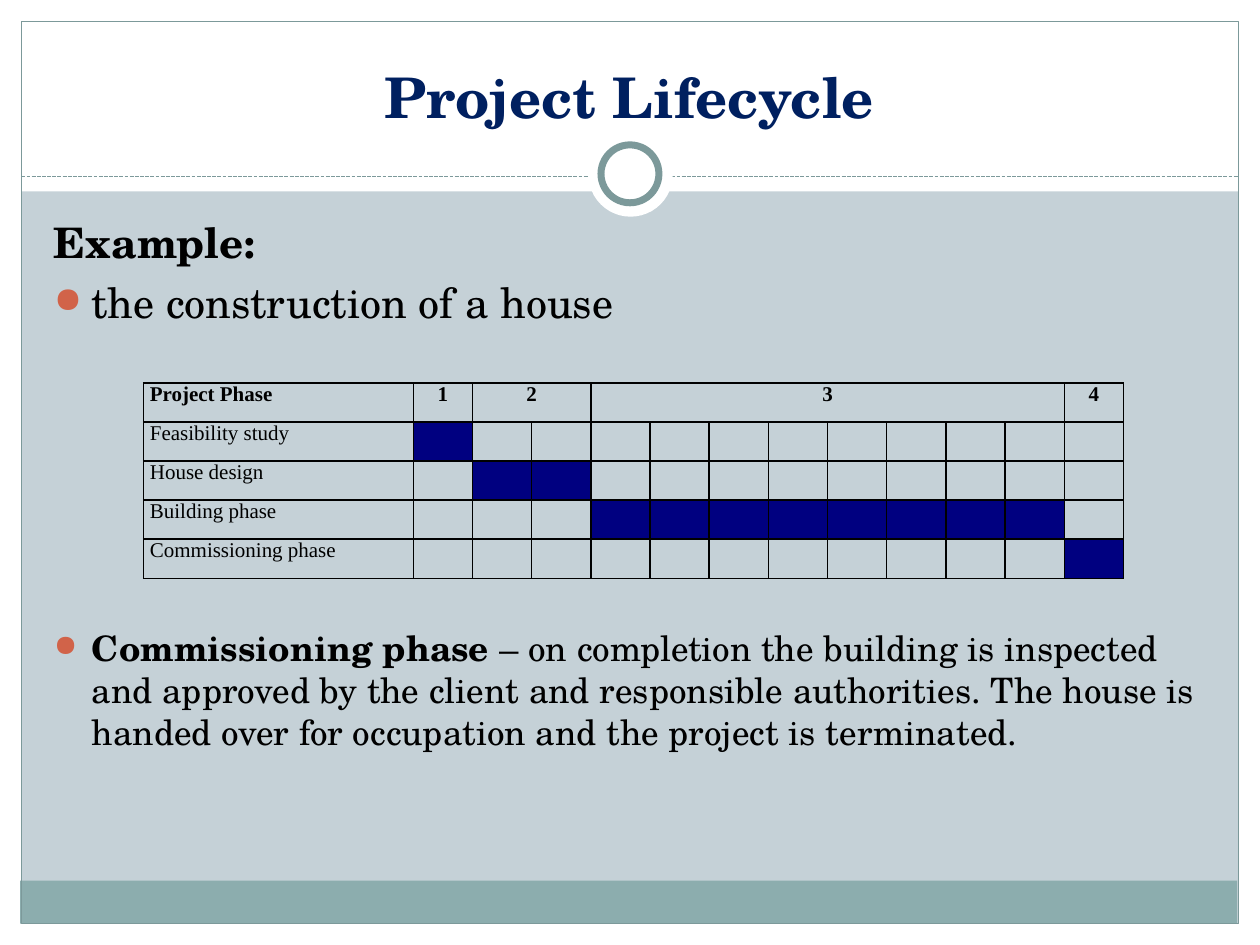
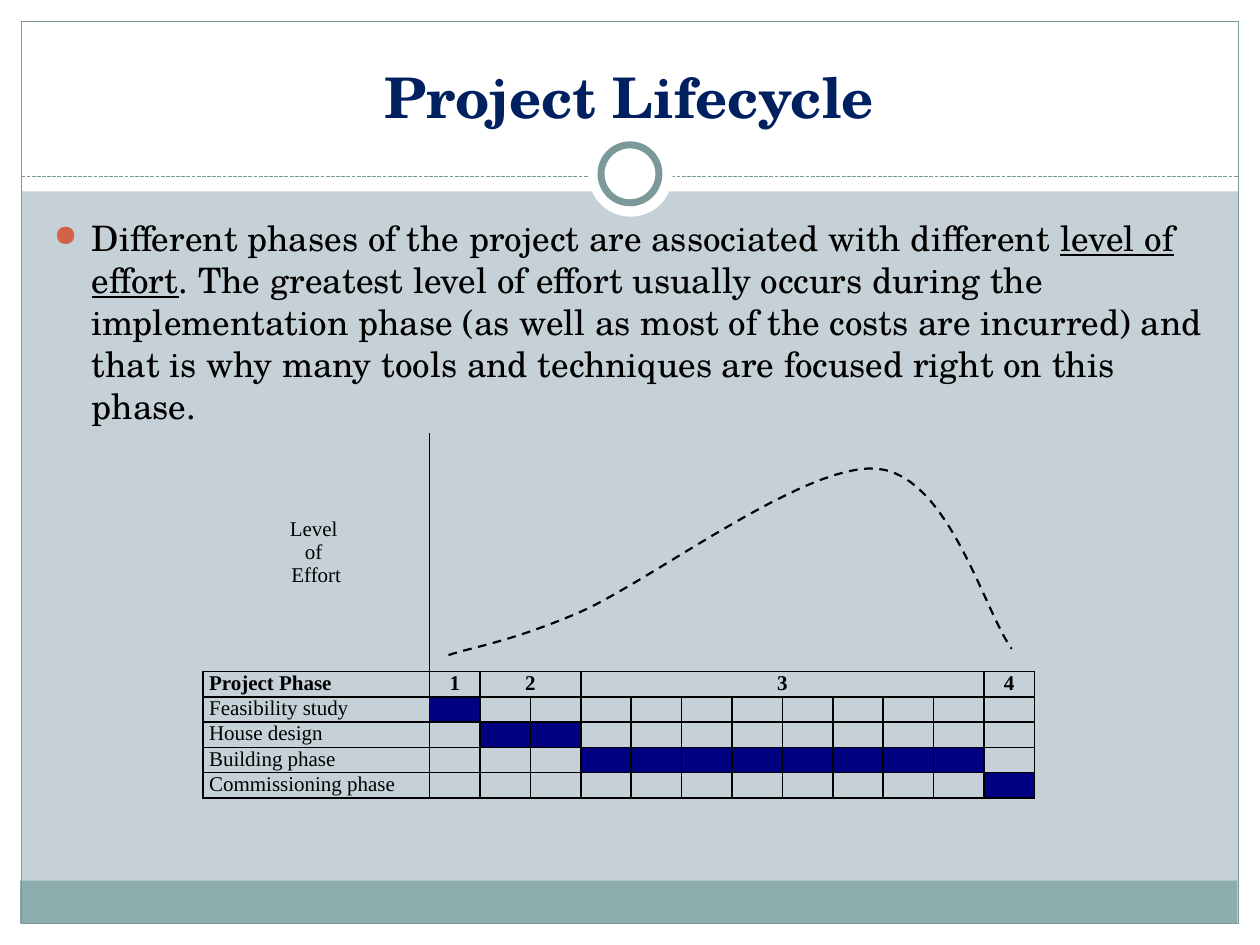
from lxml import etree
from pptx import Presentation
from pptx import util as u
from pptx.dml.color import RGBColor
from pptx.enum import dml, shapes, text
from pptx.oxml.ns import qn

HEADING_FONT = "TeX Gyre Schola"
TABLE_FONT = "Times New Roman"
WHITE, BLACK, NAVY = "FFFFFF", "000000", "002060"
PAPER, BAND, RULE = "C5D1D7", "8CADAE", "7C999A"
BULLET, BAR = "D16349", "000080"

PERIODS = 12
PHASE_SPANS = [("1", 1, 1), ("2", 2, 2), ("3", 4, 8), ("4", 12, 1)]  # label, column, width
PHASES = ["Feasibility study", "House design", "Building phase", "Commissioning phase"]


def color(value):
    return RGBColor.from_string(value)


def inches(*lengths):
    return [u.Inches(length) for length in lengths]


def apply(target, values):
    for name, value in values.items():
        setattr(target, name, value)


def bezier(start, first, second, end, steps=24):
    """Points on a cubic curve, without its start."""
    points = []
    for step in range(1, steps + 1):
        t = step / steps
        weights = (1 - t) ** 3, 3 * t * (1 - t) ** 2, 3 * t * t * (1 - t), t ** 3
        points.append(tuple(sum(w * p[axis] for w, p in zip(weights, (start, first, second, end)))
                            for axis in (0, 1)))
    return points


class Deck:
    def __init__(self):
        self.prs = Presentation()
        self.prs.slide_width, self.prs.slide_height = inches(10, 7.5)
        self.slide = None

    # Shared frame and title
    def new_slide(self, title):
        self.slide = self.prs.slides.add_slide(self.prs.slide_layouts[6])
        background = self.slide.background.fill
        background.solid()
        background.fore_color.rgb = color(PAPER)
        for edge in [(0, 7.33, 10, 0.17), (0, 0, 10, 1.52),
                     (0, 0, 0.17, 7.5), (9.83, 0, 0.17, 7.5)]:
            self.shape(edge, WHITE)
        self.shape((0.16, 6.99, 9.66, 0.34), BAND)
        self.shape((0.17, 0.17, 9.66, 7.16), line=RULE)
        self.dashed_rule((0.17, 1.4), (9.83, 1.4))
        oval = shapes.MSO_SHAPE.OVAL
        self.shape((4.67, 1.05, 0.67, 0.67), WHITE, kind=oval)
        self.shape((4.77, 1.15, 0.46, 0.46), WHITE, RULE, 4, oval)
        frame = self.text_box((0.33, 0.25, 9.33, 0.83), text.MSO_ANCHOR.BOTTOM)
        heading = frame.paragraphs[0]
        heading.alignment = text.PP_ALIGN.CENTER
        self.run(heading, title, 32, NAVY, bold=True)

    def shape(self, box, fill=None, line=None, width=0.75, kind=shapes.MSO_SHAPE.RECTANGLE):
        item = self.slide.shapes.add_shape(kind, *inches(*box))
        self.paint(item, fill)
        if line:
            self.stroke(item, line, width)
        else:
            item.line.fill.background()

    def paint(self, item, fill):
        item.shadow.inherit = False
        if fill:
            item.fill.solid()
            item.fill.fore_color.rgb = color(fill)
        else:
            item.fill.background()

    def stroke(self, item, line, width, dash=None):
        item.line.color.rgb = color(line)
        apply(item.line, {"width": u.Pt(width), "dash_style": dash})

    def dashed_rule(self, start, end):
        rule = self.slide.shapes.add_connector(
            shapes.MSO_CONNECTOR.STRAIGHT, *inches(*start, *end))
        self.stroke(rule, RULE, 0.75, dml.MSO_LINE.SQUARE_DOT)
        etree.SubElement(rule._element.spPr, qn("a:effectLst"))

    def curve(self, start, segments):
        points = [start]
        for segment in segments:
            points += bezier(points[-1], *segment)
        builder = self.slide.shapes.build_freeform(*inches(*start))
        builder.add_line_segments([inches(*point) for point in points[1:]], close=False)
        item = builder.convert_to_shape()
        self.paint(item, None)
        self.stroke(item, BLACK, 1.25, dml.MSO_LINE.DASH)

    # Text
    def text_box(self, box, anchor=text.MSO_ANCHOR.TOP):
        frame = self.slide.shapes.add_textbox(*inches(*box)).text_frame
        apply(frame, {"word_wrap": True, "vertical_anchor": anchor})
        return frame

    def run(self, paragraph, words, size, ink=BLACK, font=HEADING_FONT, bold=False, underline=False):
        run = paragraph.add_run()
        run.text = words
        apply(run.font, {"name": font, "size": u.Pt(size), "bold": bold, "underline": underline})
        run.font.color.rgb = color(ink)

    def body(self, items):
        """Each item: size, space before, bulleted, list of (words, format)."""
        frame = self.text_box((0.33, 1.67, 9.4, 5))
        for index, (size, before, bulleted, runs) in enumerate(items):
            paragraph = frame.add_paragraph() if index else frame.paragraphs[0]
            paragraph.space_before = u.Pt(before)
            if bulleted:
                self.bullet(paragraph)
            for words, style in runs:
                self.run(paragraph, words, size, **style)

    def bullet(self, paragraph):
        props = paragraph._p.get_or_add_pPr()
        indent = u.Inches(0.3)
        props.set("marL", str(indent))
        props.set("indent", str(-indent))
        tint = etree.SubElement(props, qn("a:buClr"))
        etree.SubElement(tint, qn("a:srgbClr"), val=BULLET)
        etree.SubElement(props, qn("a:buSzPct"), val="85000")
        etree.SubElement(props, qn("a:buChar"), char="●")

    # Phase table
    def phase_table(self, left, top, label_width, period_width, row_height, effort_height=None):
        offset = 1 if effort_height else 0
        heights = [effort_height] * offset + [row_height] * (len(PHASES) + 1)
        widths = [label_width] + [period_width] * PERIODS
        table = self.slide.shapes.add_table(
            len(heights), len(widths), *inches(left, top, sum(widths), sum(heights))).table
        apply(table, {"first_row": False, "horz_banding": False})
        for column, width in zip(table.columns, widths):
            column.width = u.Inches(width)
        for row, height in zip(table.rows, heights):
            row.height = u.Inches(height)

        bars = {(offset + 1 + index, column) for index, (_, first, count) in enumerate(PHASE_SPANS)
                for column in range(first, first + count)}
        for r in range(len(heights)):
            for c in range(len(widths)):
                sides = "LRTB"
                if r < offset:
                    sides = "RB" if c == 0 else "LB" if c == 1 else "B"
                self.cell_style(table.cell(r, c), sides, BAR if (r, c) in bars else None)

        self.cell_text(table.cell(offset, 0), ["Project Phase"], bold=True)
        for label, first, count in PHASE_SPANS:
            cell = table.cell(offset, first)
            if count > 1:
                cell.merge(table.cell(offset, first + count - 1))
            self.cell_text(cell, [label], True, True)
        for r, phase in enumerate(PHASES, offset + 1):
            self.cell_text(table.cell(r, 0), [phase])
        if offset:
            table.cell(0, 1).merge(table.cell(0, PERIODS))
            effort = table.cell(0, 0)
            effort.vertical_anchor = text.MSO_ANCHOR.MIDDLE
            self.cell_text(effort, ["Level ", "of ", "Effort"], centered=True)

    def cell_style(self, cell, sides, fill):
        apply(cell, {"margin_left": u.Inches(0.05), "margin_right": u.Inches(0.05),
                     "margin_top": 0, "margin_bottom": 0})
        props = cell._tc.get_or_add_tcPr()
        for side in "LRTB":
            border = etree.SubElement(props, qn(f"a:ln{side}"), w=str(u.Pt(1)))
            if side in sides:
                solid = etree.SubElement(border, qn("a:solidFill"))
                etree.SubElement(solid, qn("a:srgbClr"), val=BLACK)
            else:
                etree.SubElement(border, qn("a:noFill"))
        if fill:
            cell.fill.solid()
            cell.fill.fore_color.rgb = color(fill)
        else:
            cell.fill.background()
        # Keeps empty cells from stretching their row
        etree.SubElement(cell.text_frame.paragraphs[0]._p, qn("a:endParaRPr"), sz="1200")

    def cell_text(self, cell, lines, bold=False, centered=False):
        frame = cell.text_frame
        for index, words in enumerate(lines):
            paragraph = frame.add_paragraph() if index else frame.paragraphs[0]
            if centered:
                paragraph.alignment = text.PP_ALIGN.CENTER
            self.run(paragraph, words, 12, font=TABLE_FONT, bold=bold)


def main():
    deck = Deck()

    # House example
    deck.new_slide("Project Lifecycle")
    deck.body([
        (24, 0, False, [("Example:", {"bold": True})]),
        (24, 5.5, True, [("the construction of a house", {})]),
        (20, 171, True, [
            ("Commissioning phase", {"bold": True}),
            (" – on completion the building is inspected and approved by the client and "
             "responsible authorities. The house is handed over for occupation and the "
             "project is terminated.", {})]),
    ])
    deck.phase_table(1.14, 3.04, 2.14, 0.47, 0.31)

    # Level of effort
    deck.new_slide("Project Lifecycle")
    deck.body([(20, 0, True, [
        ("Different phases of the project are associated with different ", {}),
        ("level of effort", {"underline": True}),
        (". The greatest level of effort usually occurs during the implementation phase "
         "(as well as most of the costs are incurred) and that is why many tools and "
         "techniques are focused right on this phase.", {})])])
    deck.phase_table(1.61, 3.44, 1.8, 0.4, 0.2, effort_height=1.89)
    deck.curve((3.56, 5.2), [
        ((3.73, 5.14), (4.04, 5.1), (4.6, 4.86)),
        ((5.17, 4.61), (6.39, 3.67), (6.96, 3.72)),
        ((7.53, 3.77), (7.81, 4.85), (8.03, 5.15)),
    ])

    deck.prs.save("out.pptx")


if __name__ == "__main__":
    main()
